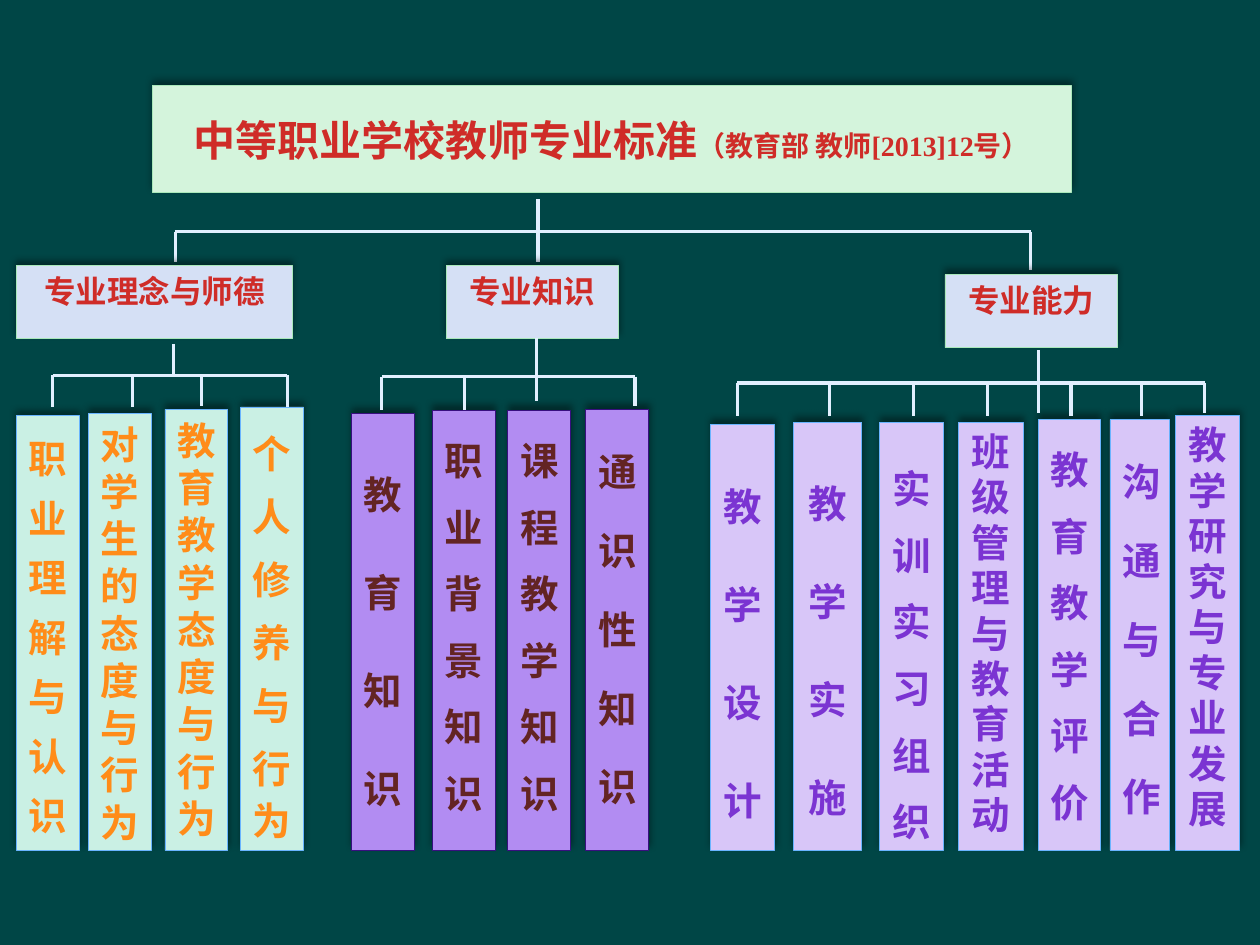
from lxml import etree
from pptx import Presentation
from pptx.dml.color import RGBColor
from pptx.enum.shapes import MSO_CONNECTOR, MSO_SHAPE
from pptx.enum.text import MSO_ANCHOR as Anchor, PP_ALIGN as Align
from pptx.oxml import parse_xml
from pptx.oxml.ns import nsdecls, qn
from pptx.util import Inches, Pt

FONT = "Times New Roman"
BAR_BOTTOM = 6.75
COLORS = {
    "background": "004646", "connector": "E1F0FF",
    "title_fill": "D4F4DC", "heading_fill": "D5E0F5",
    "heading_line": "AAE8BA", "heading_text": "CF2C28",
    "ethics_fill": "CAF0E4", "ethics_text": "FF8C19",
    "knowledge_fill": "B28CF2", "knowledge_line": "380F7F", "knowledge_text": "632423",
    "ability_fill": "D8C6F8", "ability_text": "7B34D2", "bar_line": "69B4FF",
}
BRANCHES = [
    {
        "heading": "专业理念与师德", "box": (0.13, 2.11, 2.19, 0.58),
        "trunk": (1.38, 2.73, 2.98), "rail": 2.98,
        "drops": [(0.42, 3.23), (1.05, 3.23), (1.6, 3.22), (2.28, 3.23)],
        "colors": ("ethics_fill", "bar_line", "ethics_text"), "align": Align.CENTER,
        "bars": [
            (0.13, 3.3, 0.5, [("职业理解与认识", 34)]),
            (0.7, 3.28, 0.5, [("对学生的态度与行为", 27)]),
            (1.31, 3.25, 0.5, [("教育教学态度与行为", 27)]),
            (1.91, 3.23, 0.5, [("个人修养与行", 36), ("为", 30)]),
        ],
    },
    {
        "heading": "专业知识", "box": (3.54, 2.11, 1.37, 0.58),
        "trunk": (4.26, 2.68, 3.18), "rail": 2.99,
        "drops": [(3.03, 3.25), (3.69, 3.25), (5.04, 3.22)],
        "colors": ("knowledge_fill", "knowledge_line", "knowledge_text"),
        "align": Align.JUSTIFY,
        "bars": [
            (2.79, 3.28, 0.5, [("教育知识", 56)]),
            (3.43, 3.26, 0.5, [("职业背景知识", 38)]),
            (4.03, 3.26, 0.5, [("课程教学知识", 38)]),
            (4.65, 3.25, 0.5, [("通识性知识", 45)]),
        ],
    },
    {
        "heading": "专业能力", "box": (7.5, 2.18, 1.37, 0.58),
        "trunk": (8.24, 2.78, 3.28), "rail": 3.04,
        "drops": [(5.85, 3.3), (6.58, 3.3), (7.25, 3.3), (7.84, 3.3),
                  (8.5, 3.3), (9.06, 3.3), (9.56, 3.28)],
        "colors": ("ability_fill", "bar_line", "ability_text"), "align": Align.CENTER,
        "bars": [
            (5.64, 3.37, 0.51, [("教学设计", 56)]),
            (6.3, 3.35, 0.54, [("教学实施", 56)]),
            (6.98, 3.35, 0.51, [("实训实习组织", 38)], Anchor.BOTTOM),
            (7.61, 3.35, 0.51, [("班级管理与教育活动", 26)]),
            (8.24, 3.33, 0.49, [("教育教学评价", 38)]),
            (8.81, 3.33, 0.47, [("沟通与合作", 45)]),
            (9.33, 3.3, 0.51, [("教学研究与专业发展", 26)]),
        ],
    },
]


def rgb(name):
    """Return the named colour."""
    return RGBColor.from_string(COLORS[name])


def add_panel(slide, box, fill, outline, anchor=Anchor.TOP):
    """Add a thinly outlined panel with an upward shadow and return its text frame."""
    panel = slide.shapes.add_shape(MSO_SHAPE.RECTANGLE, *map(Inches, box))
    panel.fill.solid()
    panel.fill.fore_color.rgb = rgb(fill)
    panel.line.color.rgb = rgb(outline)
    panel.line.width = Pt(0.5)
    panel._element.spPr.append(parse_xml(
        f'<a:effectLst {nsdecls("a")}><a:outerShdw blurRad="{Pt(4)}" dist="{Pt(3)}" '
        'dir="16200000" rotWithShape="0"><a:srgbClr val="000000">'
        '<a:alpha val="40000"/></a:srgbClr></a:outerShdw></a:effectLst>'))
    frame = panel.text_frame
    frame.word_wrap = True
    frame.vertical_anchor = anchor
    return frame


def style_paragraph(paragraph, size, color, align=Align.CENTER):
    """Set the bold type and alignment of a paragraph."""
    paragraph.alignment = align
    paragraph.font.name = FONT
    paragraph.font.size = Pt(size)
    paragraph.font.bold = True
    paragraph.font.color.rgb = rgb(color)


def add_line(slide, x1, y1, x2, y2):
    """Draw one straight tree line."""
    line = slide.shapes.add_connector(
        MSO_CONNECTOR.STRAIGHT, *map(Inches, (x1, y1, x2, y2)))
    line.line.color.rgb = rgb("connector")
    line.line.width = Pt(1.75)
    etree.SubElement(line._element.spPr, qn("a:effectLst"))


def add_tree(slide, trunk, rail, drops):
    """Draw a trunk, a horizontal rail and the drops hanging from it."""
    x, top, bottom = trunk
    add_line(slide, x, top, x, bottom)
    add_line(slide, drops[0][0], rail, drops[-1][0], rail)
    for drop_x, drop_bottom in drops:
        add_line(slide, drop_x, rail, drop_x, drop_bottom)


def add_title(slide, box):
    """Add the title panel with its smaller document number."""
    frame = add_panel(slide, box, "title_fill", "heading_line", Anchor.MIDDLE)
    title = frame.paragraphs[0]
    style_paragraph(title, 24, "heading_text")
    title.add_run().text = "中等职业学校教师专业标准"
    number = title.add_run()
    number.text = "（教育部 教师[2013]12号）"
    number.font.size = Pt(16)


def add_bar(slide, colors, align, left, top, width, parts, anchor=Anchor.TOP):
    """Add a narrow bar whose text stacks one character per line."""
    fill, outline, text_color = colors
    box = (left, top, width, BAR_BOTTOM - top)
    frame = add_panel(slide, box, fill, outline, anchor)
    for index, (text, spacing) in enumerate(parts):
        paragraph = frame.add_paragraph() if index else frame.paragraphs[0]
        paragraph.text = text
        paragraph.line_spacing = Pt(spacing)
        style_paragraph(paragraph, 22, text_color, align)


def add_branch(slide, branch):
    """Add a heading, its bars and the lines between them."""
    for bar in branch["bars"]:
        add_bar(slide, branch["colors"], branch["align"], *bar)
    frame = add_panel(slide, branch["box"], "heading_fill", "heading_line")
    frame.text = branch["heading"]
    style_paragraph(frame.paragraphs[0], 18, "heading_text")
    add_tree(slide, branch["trunk"], branch["rail"], branch["drops"])


def main():
    """Build the teacher standards slide."""
    deck = Presentation()
    deck.slide_width, deck.slide_height = Inches(10), Inches(7.5)
    slide = deck.slides.add_slide(deck.slide_layouts[6])
    slide.background.fill.solid()
    slide.background.fill.fore_color.rgb = rgb("background")
    add_title(slide, (1.21, 0.68, 7.29, 0.85))
    add_tree(slide, (4.27, 1.58, 2.08), 1.84, [(1.39, 2.08), (8.18, 2.14)])
    for branch in BRANCHES:
        add_branch(slide, branch)
    deck.save("out.pptx")


if __name__ == "__main__":
    main()
